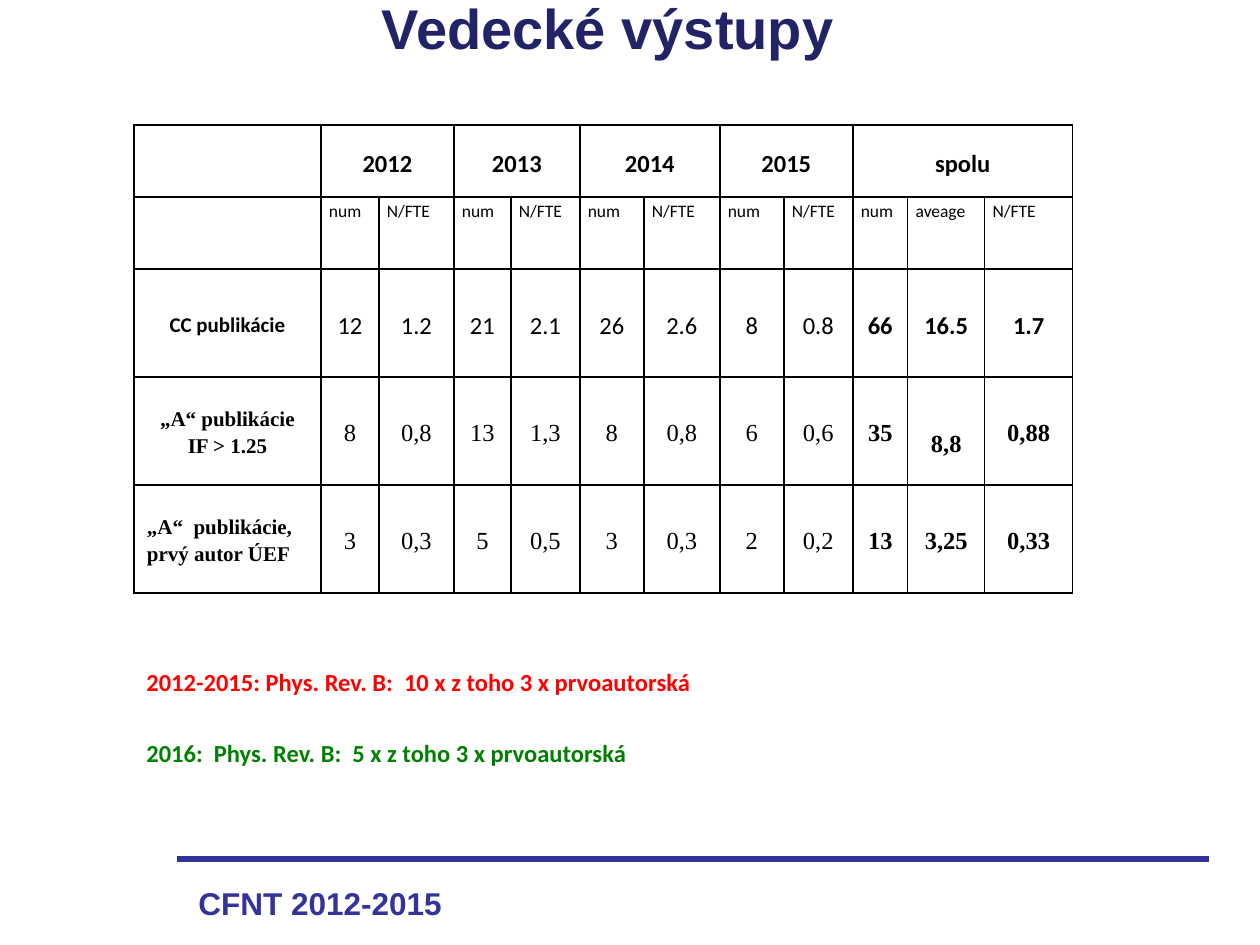
from lxml.etree import SubElement
from pptx import Presentation
from pptx.dml.color import RGBColor
from pptx.enum.shapes import MSO_CONNECTOR
from pptx.enum.text import MSO_ANCHOR, PP_ALIGN
from pptx.oxml import parse_xml
from pptx.oxml.ns import nsdecls, qn
from pptx.util import Pt

PX = 914400 / 126
LEFT, MID = PP_ALIGN.LEFT, PP_ALIGN.CENTER


def px(*nums):
    return [round(n * PX) for n in nums]


def put(frame, lines, size, font, hue="000000", bold=True, align=LEFT):
    for i, line in enumerate(lines):
        para = frame.paragraphs[0] if i == 0 else frame.add_paragraph()
        para.alignment = align
        run = para.add_run()
        run.text = line
        run.font.size = Pt(size)
        run.font.name = font
        run.font.bold = bold
        run.font.color.rgb = RGBColor.from_string(hue)


deck = Presentation()
deck.slide_width, deck.slide_height = px(1260, 945)
slide = deck.slides.add_slide(deck.slide_layouts[6])
shapes = slide.shapes

foot = shapes.add_textbox(*px(186, 878, 271, 50)).text_frame
foot.word_wrap = False
put(foot, ["CFNT 2012-2015"], 18, "Arial", "333399")

rule = shapes.add_connector(MSO_CONNECTOR.STRAIGHT, *px(177, 859, 1209, 859))
rule.line.color.rgb = RGBColor.from_string("333399")
rule.line.width = Pt(3)
SubElement(rule._element.spPr, qn("a:effectLst"))

title = shapes.add_textbox(*px(368, -13, 480, 81)).text_frame
title.word_wrap = False
title.vertical_anchor = MSO_ANCHOR.MIDDLE
put(title, ["Vedecké výstupy"], 32, "Arial", "222267", align=MID)

widths = [187, 58, 75, 57, 69, 64, 76, 64, 69, 55, 77, 88, 6]
heights = [72, 72, 108, 108, 108]
rows = [
    ["", "2012", "", "2013", "", "2014", "", "2015", "", "spolu", "", "", ""],
    [""] + ["num", "N/FTE"] * 4 + ["num", "aveage", "N/FTE", ""],
    ["CC publikácie", "12", "1.2", "21", "2.1", "26", "2.6", "8", "0.8", "66", "16.5", "1.7", ""],
    ["„A“\u00a0publikácie\nIF > 1.25", "8", "0,8", "13", "1,3", "8", "0,8", "6", "0,6", "35", "8,8", "0,88", ""],
    ["„A“ \u00a0publikácie,\nprvý autor ÚEF", "3", "0,3", "5", "0,5", "3", "0,3", "2", "0,2", "13", "3,25", "0,33", ""],
]
grid = shapes.add_table(5, 13, *px(134, 125, sum(widths), sum(heights))).table
grid.first_row = grid.horz_banding = False
for col, width in zip(grid.columns, px(*widths)):
    col.width = width
for row, height in zip(grid.rows, px(*heights)):
    row.height = height

for r, row in enumerate(rows):
    for c, text in enumerate(row):
        cell = grid.cell(r, c)
        props = cell._tc.get_or_add_tcPr()
        for side in "LRTB":
            if c == 12 and side != "L":
                ink = "<a:noFill/>"
            else:
                ink = '<a:solidFill><a:srgbClr val="000000"/></a:solidFill>'
            props.append(parse_xml(f'<a:ln{side} {nsdecls("a")} w="12700">{ink}</a:ln{side}>'))
        cell.fill.background()
        cell.margin_left, cell.margin_right, cell.margin_top, cell.margin_bottom = px(8, 8, 1, 0)
        if not text:
            continue
        sub = r == 1
        cell.vertical_anchor = MSO_ANCHOR.TOP if sub else MSO_ANCHOR.MIDDLE
        size = 10 if sub else 12 if c == 0 else 14
        font = "Times New Roman" if r > 2 else "Calibri"
        bold = not sub and (r == 0 or c == 0 or c > 8)
        align = LEFT if sub or (r, c) == (4, 0) else MID
        put(cell.text_frame, text.split("\n"), size, font, bold=bold, align=align)
        for para in cell.text_frame.paragraphs:
            para.line_spacing = 1.15
            para.space_after = Pt(10 if r < 3 else 0)

grid.cell(4, 0).margin_left = px(13)[0]
grid.cell(3, 10).margin_top = px(22)[0]
for first, last in [(1, 2), (3, 4), (5, 6), (7, 8), (9, 11)]:
    grid.cell(0, first).merge(grid.cell(0, last))

note = shapes.add_textbox(*px(134, 660, 740, 115)).text_frame
note.word_wrap = True
note.vertical_anchor = MSO_ANCHOR.MIDDLE
put(note, ["2012-2015: Phys. Rev. B:  10 x z\u00a0toho 3 x prvoautorská",
           "2016:  Phys. Rev. B:  5 x z\u00a0toho 3 x prvoautorská"], 14, "Calibri", "FF0000")
last = note.paragraphs[1]
last.space_before = Pt(24)
last.runs[0].font.color.rgb = RGBColor.from_string("008000")

deck.save("out.pptx")
